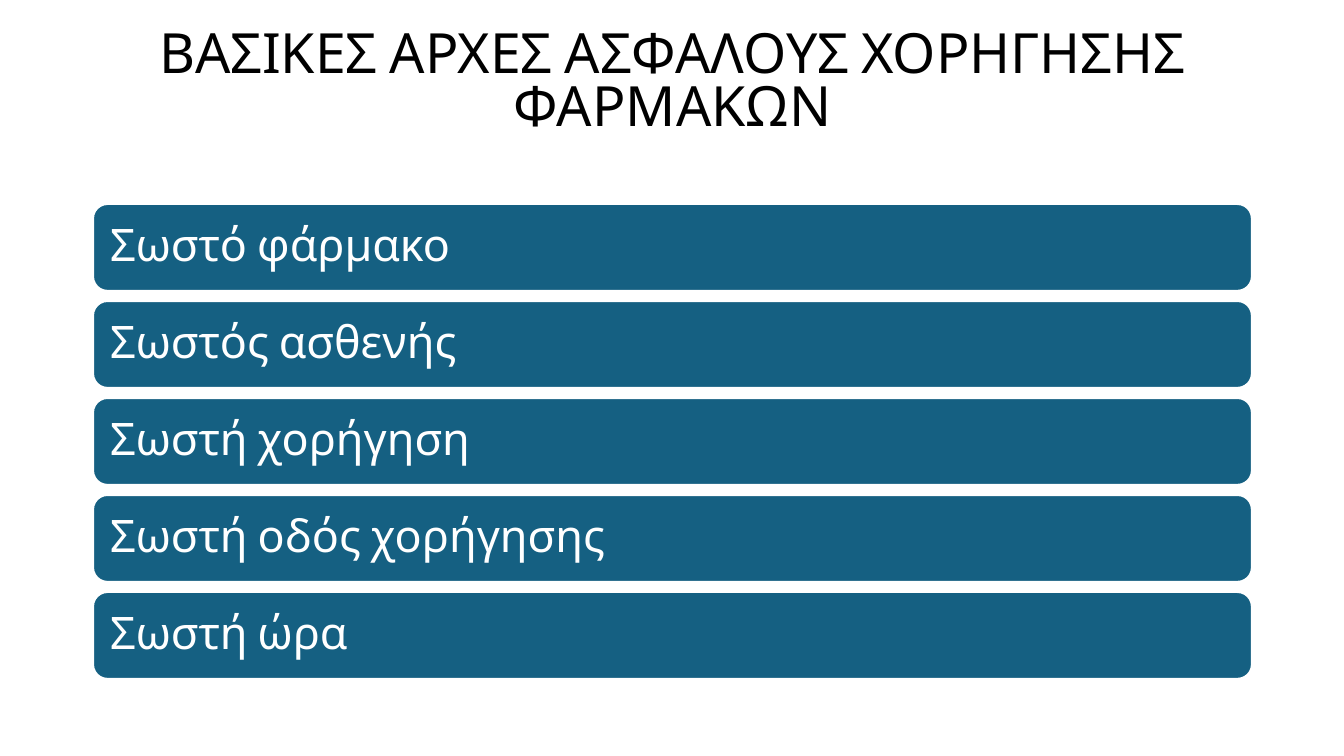
from pptx import Presentation
from pptx.dml.color import RGBColor
from pptx.enum.shapes import MSO_SHAPE
from pptx.enum.text import MSO_ANCHOR, PP_ALIGN
from pptx.util import Pt

EMU_PER_PX = 9144000 / 1008
FONT = "Cabin"
BLACK = RGBColor(0x00, 0x00, 0x00)
WHITE = RGBColor(0xFF, 0xFF, 0xFF)
TEAL = RGBColor(0x15, 0x60, 0x82)

TITLE = "ΒΑΣΙΚΕΣ ΑΡΧΕΣ ΑΣΦΑΛΟΥΣ ΧΟΡΗΓΗΣΗΣ ΦΑΡΜΑΚΩΝ"
PRINCIPLES = [
    "Σωστό φάρμακο",
    "Σωστός ασθενής",
    "Σωστή χορήγηση",
    "Σωστή οδός χορήγησης",
    "Σωστή ώρα",
]


def px(length):
    """Convert pixels to EMU."""
    return round(length * EMU_PER_PX)


def write_text(shape, text, size, color, alignment, line_spacing, inset):
    """Write one vertically centred paragraph into a shape."""
    frame = shape.text_frame
    frame.word_wrap = True
    frame.vertical_anchor = MSO_ANCHOR.MIDDLE
    frame.margin_left = frame.margin_right = px(inset)
    frame.margin_top = frame.margin_bottom = 0
    para = frame.paragraphs[0]
    para.alignment = alignment
    para.line_spacing = line_spacing
    span = para.add_run()
    span.text = text
    span.font.name = FONT
    span.font.size = Pt(size)
    span.font.color.rgb = color


def add_title(page, left, top, width, height):
    """Place the centred slide title."""
    box = page.shapes.add_textbox(px(left), px(top), px(width), px(height))
    write_text(box, TITLE, 39.6, BLACK, PP_ALIGN.CENTER, 0.8, 10)


def add_principles(page, left, top, width, height, gap=10):
    """Stack equal rounded bars, one for each principle."""
    count = len(PRINCIPLES)
    bar_height = (height - gap * (count - 1)) / count
    for index, principle in enumerate(PRINCIPLES):
        bar_top = top + index * (bar_height + gap)
        bar = page.shapes.add_shape(
            MSO_SHAPE.ROUNDED_RECTANGLE,
            px(left), px(bar_top), px(width), px(bar_height),
        )
        bar.shadow.inherit = False
        bar.fill.solid()
        bar.fill.fore_color.rgb = TEAL
        bar.line.color.rgb = WHITE
        bar.line.width = Pt(1.5)
        write_text(bar, principle, 32, WHITE, PP_ALIGN.LEFT, 0.9, 13)


def main():
    """Build and save the deck."""
    deck = Presentation()
    deck.slide_width = px(1344)
    deck.slide_height = px(756)
    page = deck.slides.add_slide(deck.slide_layouts[6])
    add_title(page, 93, 24, 1159, 120)
    add_principles(page, 93, 204, 1159, 475)
    deck.save("out.pptx")


if __name__ == "__main__":
    main()
